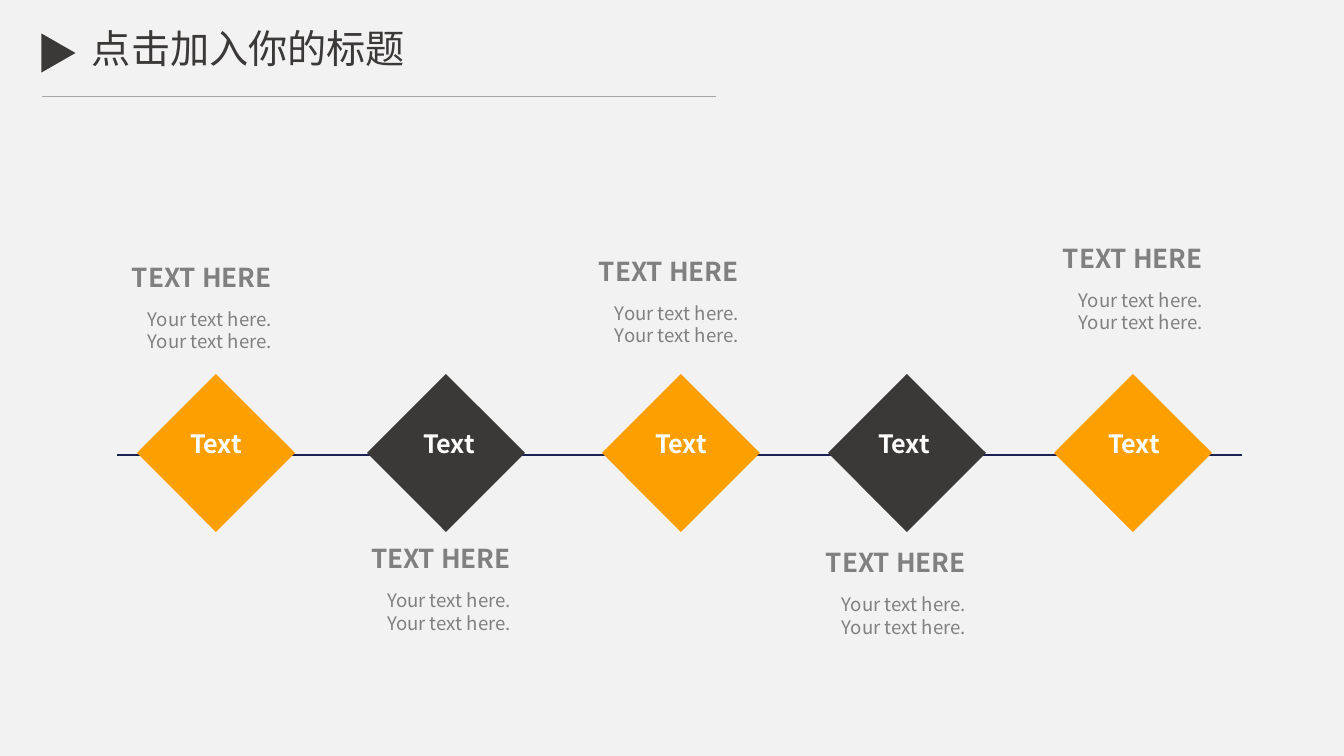
"""Build a timeline slide of five diamonds with captions above and below a line."""
from lxml import etree
from pptx import Presentation
from pptx.dml.color import RGBColor
from pptx.enum.shapes import MSO_CONNECTOR, MSO_SHAPE
from pptx.enum.text import PP_ALIGN
from pptx.oxml.ns import qn
from pptx.util import Emu, Pt

STRAIGHT = MSO_CONNECTOR.STRAIGHT
DIAMOND, TRIANGLE = MSO_SHAPE.DIAMOND, MSO_SHAPE.ISOSCELES_TRIANGLE
LEFT, CENTER = PP_ALIGN.LEFT, PP_ALIGN.CENTER
SCALE = 914400 / 100.8
THEME = {
    "font": "Noto Sans CJK SC",
    "background": "F2F2F2", "dark": "3B3838", "accent": "FE9F00",
    "rule": "A6A6A6", "axis": "1B2153", "muted": "808080", "white": "FFFFFF",
    "title": 28, "label": 18, "heading": 18.6, "body": 13.3,
}
TEXT_STYLES = {
    "title": {"color": "dark", "bold": False, "align": CENTER, "spacing": 0.9, "inset": 0},
    "label": {"color": "white", "bold": True, "align": CENTER, "spacing": 0.9, "inset": 5},
    "heading": {"color": "muted", "bold": True, "align": LEFT, "spacing": Pt(23), "inset": 5},
    "body": {"color": "muted", "bold": False, "align": LEFT, "spacing": Pt(16), "inset": 5},
}
STEPS = [
    {"diamond": 137, "label": 170, "caption": (122, 256), "fill": "accent"},
    {"diamond": 367, "label": 403, "caption": (361, 537), "fill": "dark"},
    {"diamond": 602, "label": 635, "caption": (589, 250), "fill": "accent"},
    {"diamond": 828, "label": 858, "caption": (816, 541), "fill": "dark"},
    {"diamond": 1054, "label": 1088, "caption": (1053, 237), "fill": "accent"},
]


def px(*lengths):
    return [Emu(round(length * SCALE)) for length in lengths]


def add_text(page, place, lines, style_name):
    style = TEXT_STYLES[style_name]
    frame = page.shapes.add_textbox(*px(*place)).text_frame
    inset, side = px(style["inset"], style["inset"] * 2)
    frame_format = {"word_wrap": True, "margin_top": inset, "margin_bottom": inset,
                    "margin_left": side, "margin_right": side}
    for name, value in frame_format.items():
        setattr(frame, name, value)
    for index, line in enumerate(lines):
        para = frame.add_paragraph() if index else frame.paragraphs[0]
        para.alignment, para.line_spacing = style["align"], style["spacing"]
        span = para.add_run()
        span.text = line
        font_format = {"name": THEME["font"], "size": Pt(THEME[style_name]), "bold": style["bold"]}
        for name, value in font_format.items():
            setattr(span.font, name, value)
        span.font.color.rgb = RGBColor.from_string(THEME[style["color"]])
        east_asian = etree.SubElement(span.font._element, qn("a:ea"))
        east_asian.set("typeface", THEME["font"])


deck = Presentation()
deck.slide_width, deck.slide_height = px(1344, 756)
page = deck.slides.add_slide(deck.slide_layouts[6])
page.background.fill.solid()
page.background.fill.fore_color.rgb = RGBColor.from_string(THEME["background"])

for left, right, y, color, width in [(42, 716, 96, "rule", 0.5), (117, 1242, 455, "axis", 0.75)]:
    line = page.shapes.add_connector(STRAIGHT, *px(left, y, right, y))
    line.line.color.rgb = RGBColor.from_string(THEME[color])
    line.line.width = Pt(width)
    etree.SubElement(line._element.spPr, qn("a:effectLst"))

solids = [(TRIANGLE, (39, 36, 39, 34), 90, "dark")]
solids += [(DIAMOND, (step["diamond"], 374, 158, 158), 0, step["fill"]) for step in STEPS]
for kind, place, rotation, color in solids:
    solid = page.shapes.add_shape(kind, *px(*place))
    solid.rotation = rotation
    solid.shadow.inherit = False
    solid.fill.solid()
    solid.fill.fore_color.rgb = RGBColor.from_string(THEME[color])
    solid.line.fill.background()

add_text(page, (59, 30, 379, 47), ["点击加入你的标题"], "title")
for step in STEPS:
    left, top = step["caption"]
    add_text(page, (step["label"], 427, 92, 50), ["Text"], "label")
    add_text(page, (left, top, 243, 42), ["TEXT HERE"], "heading")
    add_text(page, (left + 16, top + 47, 243, 55), ["Your text here."] * 2, "body")

deck.save("out.pptx")
